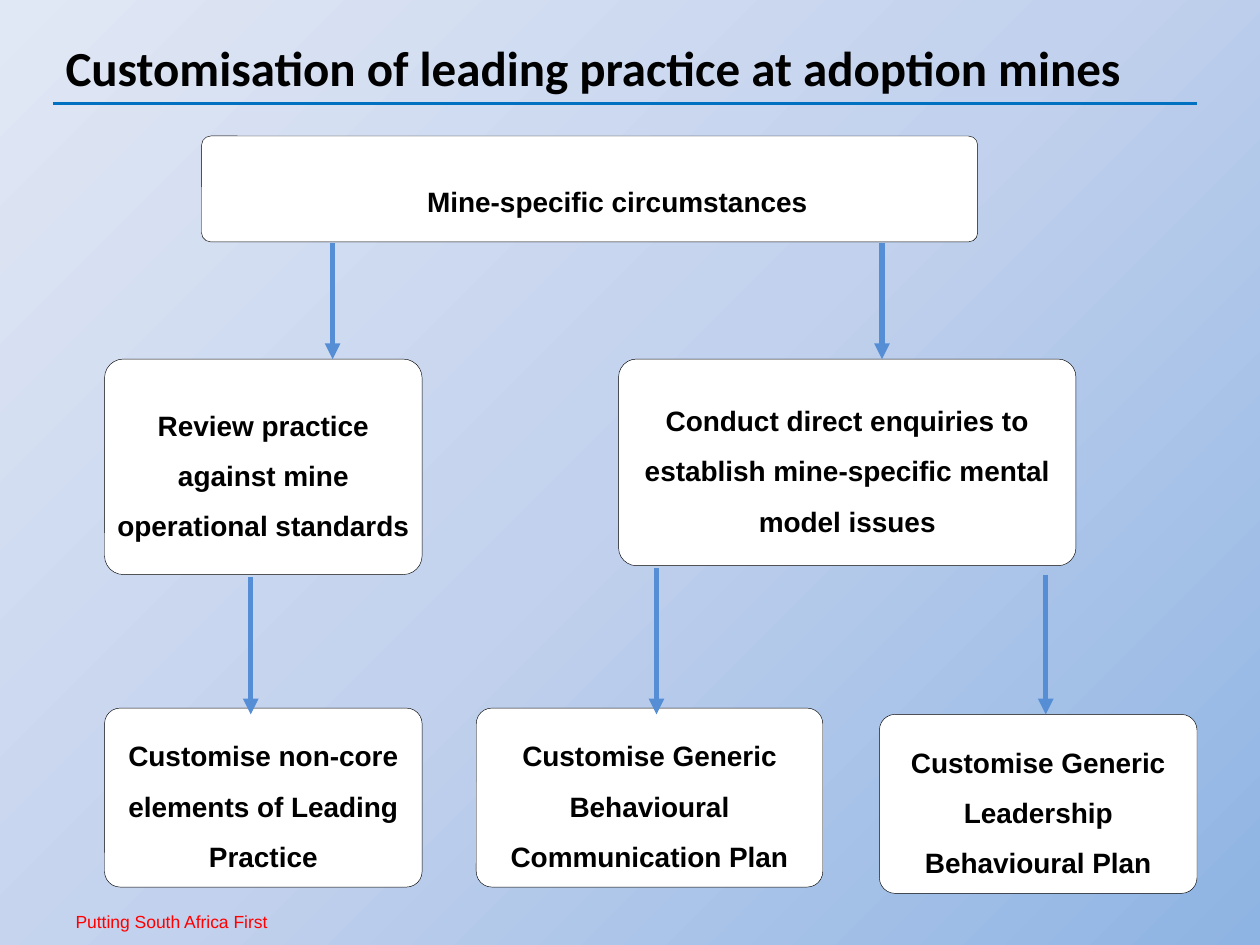
from lxml import etree
from pptx import Presentation
from pptx.dml import color
from pptx.enum import shapes, text
from pptx.oxml import parse_xml
from pptx.oxml.ns import nsdecls, qn
from pptx.util import Inches, Pt

BACKGROUND_STOPS = {0: "8EB4E3", 50: "C2D1ED", 100: "E1E8F5"}

# Offsets from the flow chart's corner: left, top, width, height
STEPS = {
    "Mine-specific circumstances": (0.77, 0, 6.16, 0.84),
    "Review practice against mine operational standards": (0, 1.77, 2.52, 1.71),
    "Conduct direct enquiries to establish mine-specific mental model issues":
        (4.08, 1.77, 3.63, 1.64),
    "Customise non-core elements of Leading Practice": (0, 4.54, 2.52, 1.42),
    "Customise Generic Behavioural Communication Plan": (2.95, 4.54, 2.75, 1.42),
    "Customise Generic Leadership Behavioural Plan": (6.15, 4.59, 2.52, 1.42),
}
# Offsets from the same corner: x, start y, end y
ARROWS = [
    (1.81, 0.85, 1.77),
    (6.17, 0.85, 1.77),
    (1.16, 3.5, 4.59),
    (4.38, 3.43, 4.59),
    (7.47, 3.48, 4.59),
]


def rgb(value):
    return color.RGBColor.from_string(value)


def set_attributes(target, values):
    for name, value in values.items():
        setattr(target, name, value)


def write(frame, wording, align, font, ink):
    frame.text = wording
    paragraph = frame.paragraphs[0]
    paragraph.alignment = align
    set_attributes(paragraph.font, font)
    paragraph.font.color.rgb = rgb(ink)
    return paragraph


def paint_background(slide):
    """Radial gradient spreading from the bottom right corner."""
    stops = "".join(
        f'<a:gs pos="{place * 1000}"><a:srgbClr val="{value}"/></a:gs>'
        for place, value in BACKGROUND_STOPS.items())
    gradient = parse_xml(
        f'<a:gradFill {nsdecls("a")} rotWithShape="1"><a:gsLst>{stops}</a:gsLst>'
        '<a:path path="circle"><a:fillToRect l="100000" t="100000"/></a:path>'
        '</a:gradFill>')
    slide.background.fill.solid()
    solid = next(slide.element.iter(qn("a:solidFill")))
    solid.getparent().replace(solid, gradient)


def add_line(slide, start, end, ink, width, arrow=False):
    line = slide.shapes.add_connector(
        shapes.MSO_CONNECTOR.STRAIGHT, *map(Inches, start + end))
    line.line.color.rgb = rgb(ink)
    line.line.width = Pt(width)
    if arrow:
        etree.SubElement(line.line._get_or_add_ln(), qn("a:tailEnd"), type="triangle")
    etree.SubElement(line._element.spPr, qn("a:effectLst"))


def add_heading(slide, left, top, width, height):
    title = slide.shapes.title
    set_attributes(title, {"left": Inches(left), "top": Inches(top),
                           "width": Inches(width), "height": Inches(height)})
    set_attributes(title.text_frame, {
        "vertical_anchor": text.MSO_ANCHOR.TOP,
        "auto_size": text.MSO_AUTO_SIZE.NONE, "word_wrap": True})
    write(title.text_frame, "Customisation of leading practice at adoption mines",
          text.PP_ALIGN.LEFT, {"name": "Calibri", "size": Pt(28), "bold": True},
          "000000")
    rule = top + height
    add_line(slide, (left, rule), (left + width, rule), "0070C0", 2)


def add_step(slide, wording, left, top, width, height):
    step = slide.shapes.add_shape(shapes.MSO_SHAPE.ROUNDED_RECTANGLE,
                                  *map(Inches, (left, top, width, height)))
    step.adjustments[0] = 0.087
    step.shadow.inherit = False
    step.fill.solid()
    step.fill.fore_color.rgb = rgb("FFFFFF")
    step.line.color.rgb = rgb("000000")
    step.line.width = Pt(0.25)
    margin = Inches(0.04)
    set_attributes(step.text_frame, {
        "margin_left": margin, "margin_right": margin, "margin_top": margin,
        "margin_bottom": margin, "word_wrap": True,
        "vertical_anchor": text.MSO_ANCHOR.MIDDLE})
    paragraph = write(step.text_frame, wording, text.PP_ALIGN.CENTER,
                      {"name": "Arial", "size": Pt(16), "bold": True}, "000000")
    paragraph.line_spacing = 1.5
    return step


def add_flow_chart(slide, left, top):
    steps = [add_step(slide, wording, left + x, top + y, width, height)
             for wording, (x, y, width, height) in STEPS.items()]
    set_attributes(steps[0].text_frame,
                   {"margin_left": Inches(0.48), "margin_top": Inches(0.1)})
    for x, start, end in ARROWS:
        add_line(slide, (left + x, top + start), (left + x, top + end),
                 "558ED5", 3, arrow=True)


def add_motto(slide, left, top, width, height):
    motto = slide.shapes.add_textbox(*map(Inches, (left, top, width, height)))
    margin = Inches(0.04)
    set_attributes(motto.text_frame, {
        "margin_left": margin, "margin_right": margin,
        "margin_top": margin, "margin_bottom": margin, "word_wrap": True})
    write(motto.text_frame, "Putting South Africa First", text.PP_ALIGN.LEFT,
          {"name": "Arial", "size": Pt(10)}, "FF0000")


def main():
    deck = Presentation()
    deck.slide_width, deck.slide_height = Inches(10), Inches(7.5)
    slide = deck.slides.add_slide(deck.slide_layouts.get_by_name("Title Only"))
    paint_background(slide)
    add_motto(slide, 0.56, 7.19, 1.69, 0.25)
    add_heading(slide, 0.42, 0.25, 9.08, 0.57)
    add_flow_chart(slide, 0.83, 1.08)
    deck.save("out.pptx")


if __name__ == "__main__":
    main()
